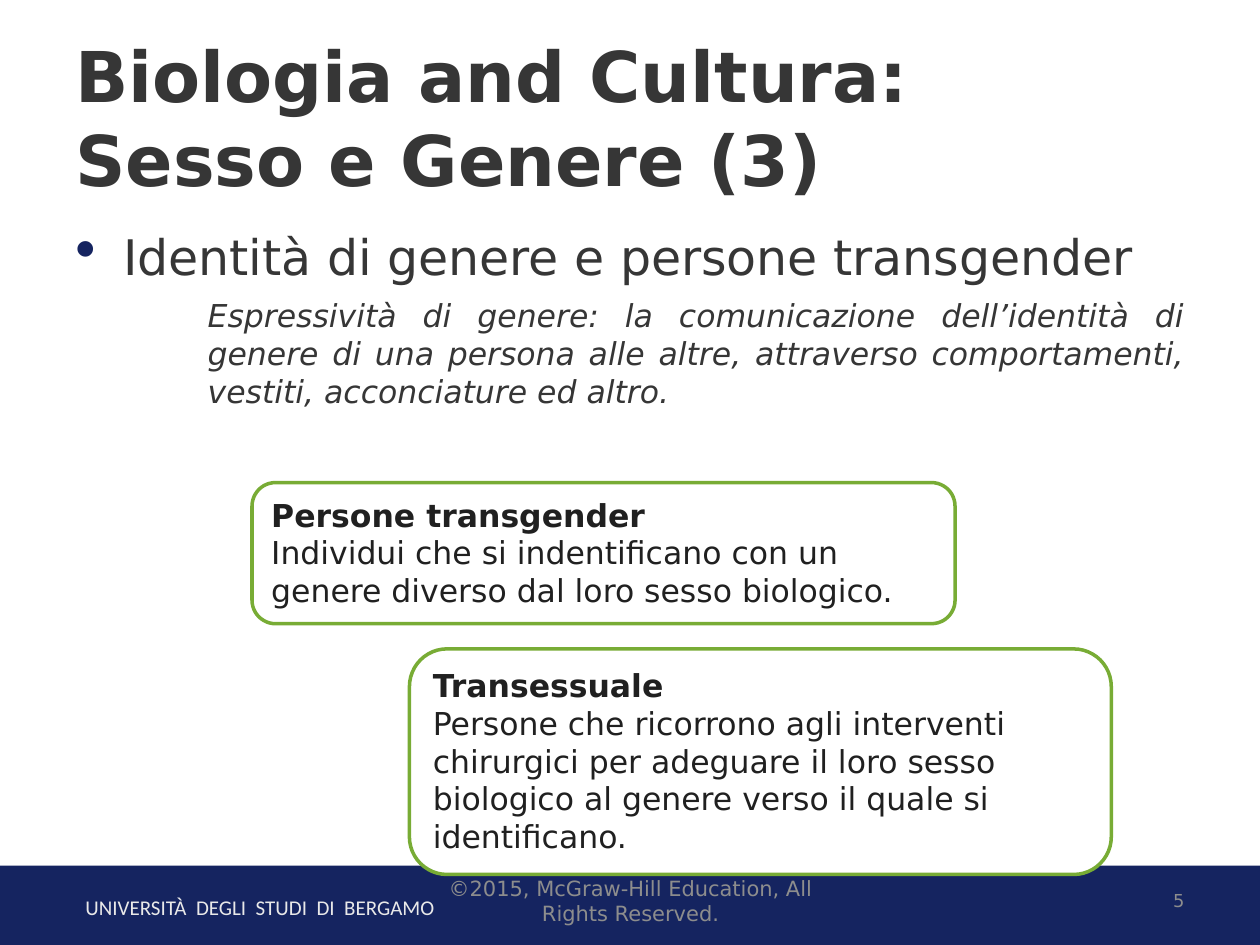
"""Build the slide on gender identity and transgender people."""
from lxml.etree import SubElement
from pptx import Presentation
from pptx.dml.color import RGBColor
from pptx.enum.shapes import MSO_SHAPE
from pptx.enum.text import MSO_ANCHOR, MSO_AUTO_SIZE, PP_ALIGN
from pptx.oxml.ns import qn
from pptx.util import Inches, Pt

NAVY, GREEN, WHITE = "152460", "78AC35", "FFFFFF"
DARK, INK, GREY, PALE = "363636", "202020", "8D8D8D", "E9E9E9"
FONT = "DejaVu Sans"

TITLE = "Biologia and Cultura: \vSesso e Genere (3)"
TOPIC = "Identità di genere e persone transgender"
EXPLANATION = (
    "Espressività di genere: la comunicazione dell’identità di genere di una persona "
    "alle altre, attraverso comportamenti, vestiti, acconciature ed altro."
)
DEFINITIONS = [
    ((2, 3.83, 5.58, 1.12), "Persone transgender",
     "Individui che si indentificano con un genere diverso dal loro sesso biologico."),
    ((3.25, 5.15, 5.57, 1.79), "Transessuale",
     "Persone che ricorrono agli interventi chirurgici per adeguare il loro sesso "
     "biologico al genere verso il quale si identificano."),
]
UNIVERSITY = "UNIVERSITÀ  DEGLI  STUDI  DI  BERGAMO"
FOOTERS = [
    ((7.17, 6.95, 2.33, 0.4), "5", 10.2, PP_ALIGN.RIGHT),
    ((3.42, 6.95, 3.17, 0.4), "©2015, McGraw-Hill Education, All Rights Reserved.", 12,
     PP_ALIGN.CENTER),
]


def color(value):
    """Turn a hex string into a colour."""
    return RGBColor.from_string(value)


def style(paragraph, size, fill, bold=False, italic=False, font=FONT, align=PP_ALIGN.LEFT):
    """Format a paragraph and its runs."""
    paragraph.alignment = align
    for run in paragraph.runs:
        run.font.name, run.font.size = font, Pt(size)
        run.font.bold, run.font.italic = bold, italic
        run.font.color.rgb = color(fill)


def fill_text(text_frame, lines, anchor=MSO_ANCHOR.TOP):
    """Write the lines as paragraphs of a wrapped frame and return them."""
    text_frame.word_wrap = True
    text_frame.auto_size = MSO_AUTO_SIZE.NONE
    text_frame.vertical_anchor = anchor
    text_frame.text = "\n".join(lines)
    return text_frame.paragraphs


def add_text(slide, box, lines, anchor=MSO_ANCHOR.TOP):
    """Add a text box and return its paragraphs."""
    shape = slide.shapes.add_textbox(*map(Inches, box))
    return fill_text(shape.text_frame, lines, anchor)


def add_panel(slide, kind, box, fill, line=None):
    """Add a filled shape with an optional outline."""
    shape = slide.shapes.add_shape(kind, *map(Inches, box))
    shape.shadow.inherit = False
    shape.fill.solid()
    shape.fill.fore_color.rgb = color(fill)
    if line:
        shape.line.color.rgb = color(line)
        shape.line.width = Pt(2)
    else:
        shape.line.fill.background()
    return shape


def indent(paragraph, left, first=0):
    """Set the left margin and first-line indent."""
    properties = paragraph._p.get_or_add_pPr()
    properties.set("marL", str(Inches(left)))
    properties.set("indent", str(Inches(first)))
    return properties


def add_bullet(properties):
    """Give a paragraph a large navy bullet."""
    bullet_color = SubElement(properties, qn("a:buClr"))
    SubElement(bullet_color, qn("a:srgbClr"), val=NAVY)
    SubElement(properties, qn("a:buSzPct"), val="122000")
    SubElement(properties, qn("a:buChar"), char="•")


def main():
    """Compose the slide and save it."""
    presentation = Presentation()
    presentation.slide_width, presentation.slide_height = Inches(10), Inches(7.5)
    slide = presentation.slides.add_slide(presentation.slide_layouts[5])

    title = slide.shapes.title
    title.left, title.top, title.width, title.height = map(Inches, (0.5, 0.3, 9, 1.25))
    heading, = fill_text(title.text_frame, [TITLE], MSO_ANCHOR.MIDDLE)
    style(heading, 40, DARK, bold=True)

    add_panel(slide, MSO_SHAPE.RECTANGLE, (0, 6.87, 10, 0.68), NAVY)
    university, = add_text(slide, (0.58, 7.05, 5.82, 0.3), [UNIVERSITY])
    style(university, 12, PALE, font="Calibri")

    topic, explanation = add_text(slide, (0.5, 1.75, 9, 4.95), [TOPIC, EXPLANATION])
    add_bullet(indent(topic, 0.38, -0.38))
    style(topic, 28, DARK)
    explanation.level = 2
    indent(explanation, 1.05)
    explanation.space_before = explanation.space_after = Pt(6)
    style(explanation, 18, DARK, italic=True, align=PP_ALIGN.JUSTIFY)

    for box, term, meaning in DEFINITIONS:
        panel = add_panel(slide, MSO_SHAPE.ROUNDED_RECTANGLE, box, WHITE, GREEN)
        term_line, meaning_line = fill_text(panel.text_frame, [term, meaning])
        style(term_line, 18, INK, bold=True)
        style(meaning_line, 18, INK)

    for box, text, size, align in FOOTERS:
        footer, = add_text(slide, box, [text], MSO_ANCHOR.MIDDLE)
        style(footer, size, GREY, align=align)

    presentation.save("out.pptx")


if __name__ == "__main__":
    main()
